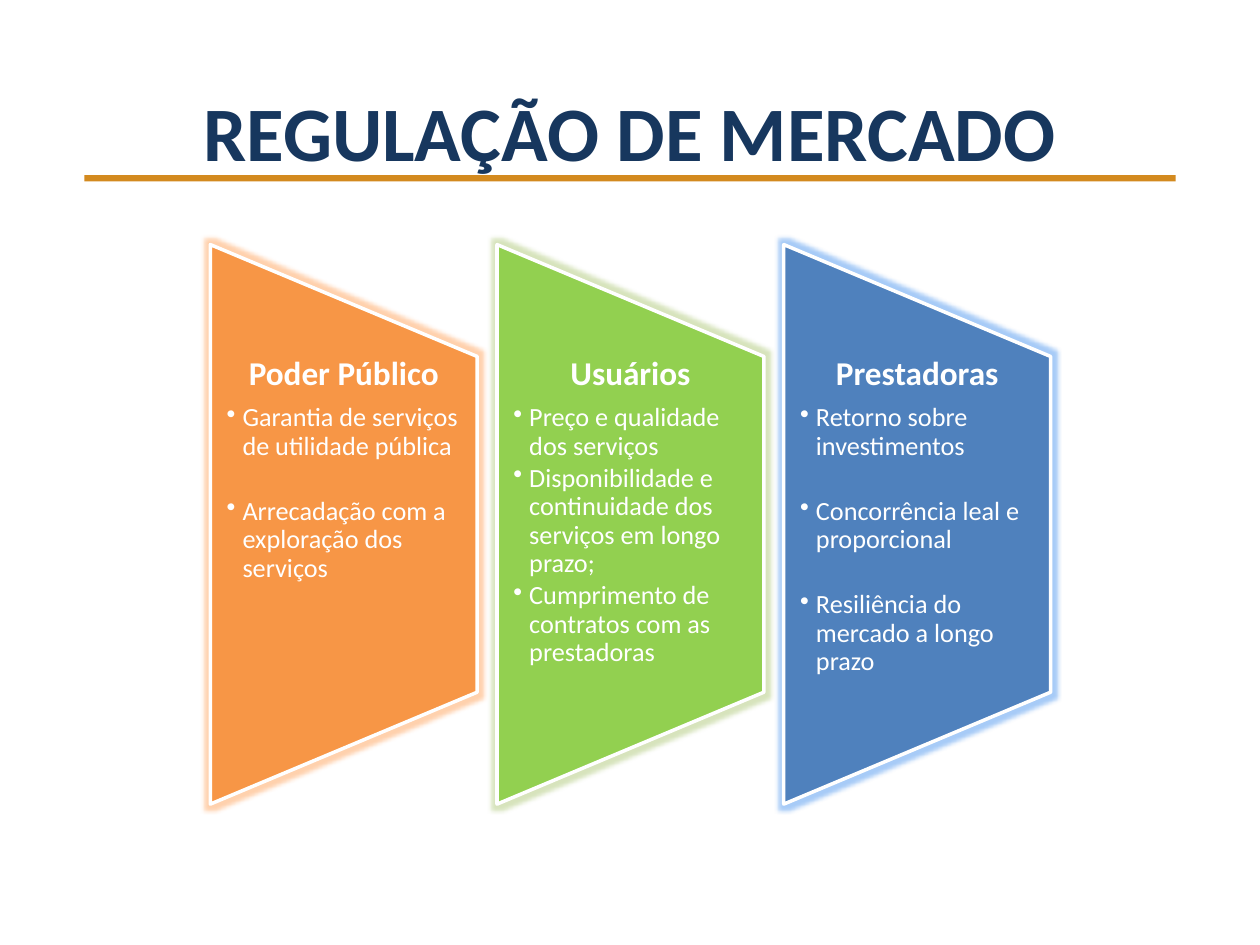
from lxml import etree
from pptx import Presentation
from pptx.dml.color import RGBColor
from pptx.enum.shapes import MSO_SHAPE as Shape
from pptx.enum.text import MSO_ANCHOR as Anchor, PP_ALIGN as Align
from pptx.oxml.ns import qn
from pptx.util import Cm, Pt

COLORS = {
    "title": "17375E", "rule": "D38A1F", "white": "FFFFFF",
    "orange": "F79646", "orange_glow": "FF8C32",
    "green": "92D050", "green_glow": "9BBB59",
    "blue": "4F81BD", "blue_glow": "237DEB",
}
TIGHT, LOOSE = Pt(2.25), Pt(21)
PANELS = [
    ("Poder Público", "orange", LOOSE, [
        "Garantia de serviços de utilidade pública",
        "Arrecadação com a exploração dos serviços"]),
    ("Usuários", "green", TIGHT, [
        "Preço e qualidade dos serviços",
        "Disponibilidade e continuidade dos serviços em longo prazo;",
        "Cumprimento de contratos com as prestadoras"]),
    ("Prestadoras", "blue", LOOSE, [
        "Retorno sobre investimentos",
        "Concorrência leal e proporcional",
        "Resiliência do mercado a longo prazo"]),
]
PANEL_WIDTH, PANEL_HEIGHT = Cm(5.38), Cm(11.28)
FIRST_LEFT, PITCH, MIDDLE = Cm(4.24), Cm(5.78), Cm(10.57)


def style_text(para, size, bold, color):
    font = para.font
    for name, value in {"name": "Calibri", "size": Pt(size), "bold": bold}.items():
        setattr(font, name, value)
    font.color.rgb = RGBColor.from_string(COLORS[color])


def add_glow(shape, color):
    """Replace the shape's theme shadow with a soft translucent glow."""
    shape.shadow.inherit = False
    effects = shape._element.spPr.find(qn("a:effectLst"))
    glow = etree.SubElement(effects, qn("a:glow"), rad=str(Pt(5)))
    tint = etree.SubElement(glow, qn("a:srgbClr"), val=COLORS[color])
    etree.SubElement(tint, qn("a:alpha"), val="40000")


deck = Presentation()
deck.slide_width, deck.slide_height = Cm(25.4), Cm(19.05)
page = deck.slides.add_slide(deck.slide_layouts[5])

title = page.shapes.title
title.left, title.top, title.width, title.height = Cm(1.27), Cm(1.32), Cm(22.86), Cm(2.62)
title.text_frame.text = "REGULAÇÃO DE MERCADO"
title.text_frame.vertical_anchor = Anchor.MIDDLE
title.text_frame.paragraphs[0].alignment = Align.CENTER
style_text(title.text_frame.paragraphs[0], 44, True, "title")

rule = page.shapes.add_shape(Shape.RECTANGLE, Cm(1.7), Cm(3.53), Cm(22), Cm(0.13))
rule.shadow.inherit = False
rule.fill.solid()
rule.fill.fore_color.rgb = RGBColor.from_string(COLORS["rule"])
rule.line.fill.background()

for column, (heading, color, gap, points) in enumerate(PANELS):
    left = FIRST_LEFT + column * PITCH

    # The shape lies flat before it is turned, so its width is the panel's height.
    panel = page.shapes.add_shape(
        Shape.FLOWCHART_MANUAL_OPERATION,
        left + (PANEL_WIDTH - PANEL_HEIGHT) // 2, MIDDLE - PANEL_WIDTH // 2,
        PANEL_HEIGHT, PANEL_WIDTH)
    panel.rotation = 270
    panel.fill.solid()
    panel.fill.fore_color.rgb = RGBColor.from_string(COLORS[color])
    panel.line.color.rgb = RGBColor.from_string(COLORS["white"])
    panel.line.width = Pt(2)
    add_glow(panel, f"{color}_glow")

    box = page.shapes.add_textbox(left, Cm(7.19), PANEL_WIDTH, Cm(6.78))
    frame = box.text_frame
    for name, value in {"word_wrap": True, "vertical_anchor": Anchor.TOP,
                        "margin_left": Cm(0.33), "margin_right": Cm(0.33),
                        "margin_top": 0, "margin_bottom": 0}.items():
        setattr(frame, name, value)

    para = frame.paragraphs[0]
    para.text = heading
    para.alignment = Align.CENTER
    para.line_spacing = 0.9
    para.space_after = Pt(6.65)
    style_text(para, 19, True, "white")

    for point in points:
        para = frame.add_paragraph()
        para.text = point
        para.level = 1
        para.line_spacing = 0.9
        para.space_after = TIGHT if point == points[-1] else gap
        properties = para._p.get_or_add_pPr()
        properties.set("marL", str(Cm(0.32)))
        properties.set("indent", str(-Cm(0.32)))
        etree.SubElement(properties, qn("a:buChar"), char="•")
        style_text(para, 15, False, "white")

deck.save("out.pptx")
